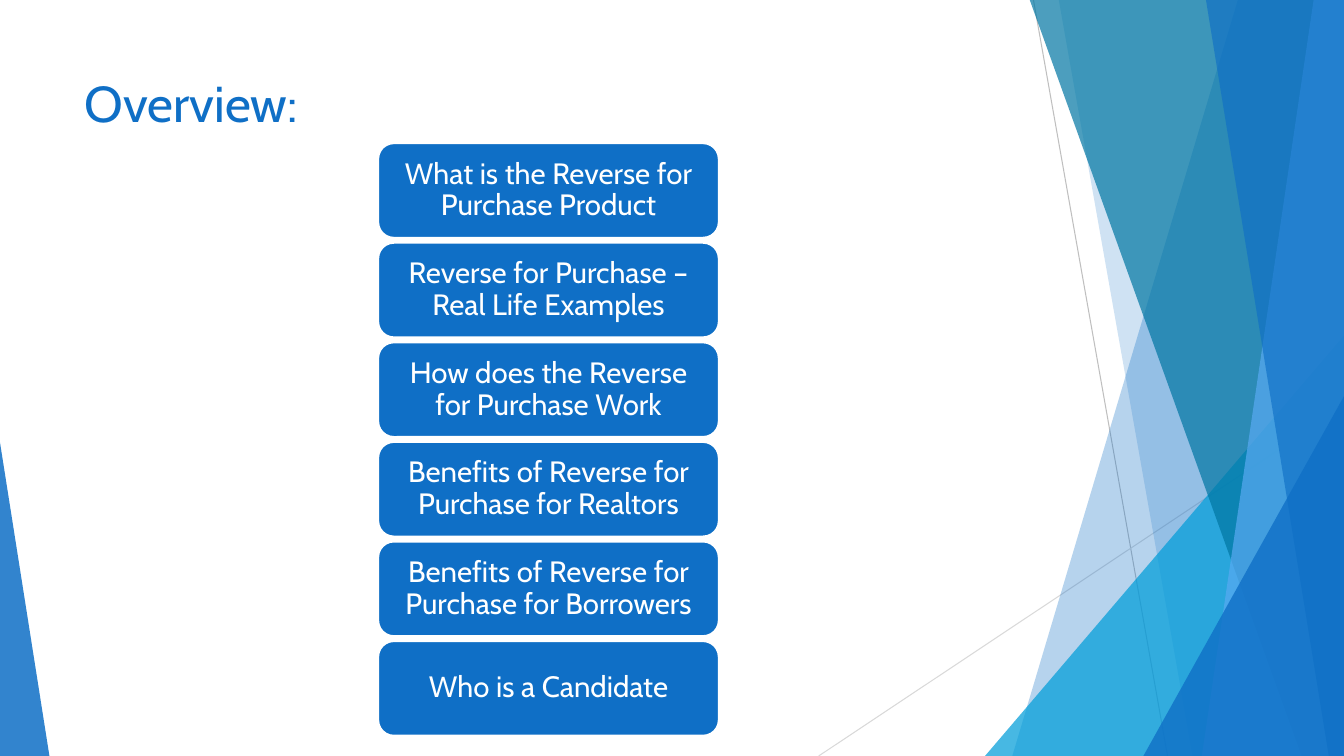
from lxml import etree
from pptx import Presentation
from pptx.dml.color import RGBColor
from pptx.enum.shapes import MSO_CONNECTOR, MSO_SHAPE
from pptx.enum.text import MSO_ANCHOR, PP_ALIGN
from pptx.oxml.ns import qn
from pptx.util import Inches, Pt

BLUE = RGBColor(0x0F, 0x6F, 0xC6)
CYAN = RGBColor(0x00, 0x9D, 0xD9)
TEAL = RGBColor(0x00, 0x76, 0xA3)
SKY = RGBColor(0x59, 0xAA, 0xF2)
GREY = RGBColor(0xBF, 0xBF, 0xBF)
PALE_GREY = RGBColor(0xD9, 0xD9, 0xD9)
WHITE = RGBColor(0xFF, 0xFF, 0xFF)
WIDTH, HEIGHT, TOP = 13.33, 7.5, -0.01


def fill_glass(shape, color, opacity):
    """Fill a decorative shape with a see-through colour and no outline."""
    shape.shadow.inherit = False
    shape.line.fill.background()
    shape.fill.solid()
    shape.fill.fore_color.rgb = color
    solid = shape.fill._xPr.find(qn("a:solidFill"))
    etree.SubElement(solid[0], qn("a:alpha"), val=str(opacity * 1000))


def write_text(frame, text, size, color, **formats):
    """Write one paragraph; formats are paragraph attributes."""
    frame.word_wrap = True
    para = frame.paragraphs[0]
    for name, value in formats.items():
        setattr(para, name, value)
    span = para.add_run()
    span.text = text
    for name, value in {"name": "Cabin", "size": Pt(size)}.items():
        setattr(span.font, name, value)
    span.font.color.rgb = color


deck = Presentation()
deck.slide_width, deck.slide_height = Inches(WIDTH), Inches(HEIGHT)
page = deck.slides.add_slide(deck.slide_layouts[6])

# Thin background lines
for x1, y1, x2, y2, color in [
    (10.25, 0, 11.58, HEIGHT, GREY),
    (WIDTH, 4.03, 8.12, HEIGHT, PALE_GREY),
]:
    line = page.shapes.add_connector(
        MSO_CONNECTOR.STRAIGHT, Inches(x1), Inches(y1), Inches(x2), Inches(y2))
    line.line.color.rgb = color
    line.line.width = Pt(0.75)
    etree.SubElement(line._element.spPr, qn("a:effectLst"))

# Glass shards, back to front: a band has the x of its slanted edge at top and
# bottom, a triangle has its left, top, width and apex position
for kind, place, color, opacity in [
    ("band", (12.28, 10.04), BLUE, 30),
    ("band", (10.5, 11.83), BLUE, 20),
    ("triangle", (9.77, 3.33, 3.56, 1), CYAN, 72),
    ("band", (10.21, 12.91), TEAL, 70),
    ("band", (13.03, 11.92), SKY, 70),
    ("band", (11.96, 13.18), BLUE, 65),
    ("triangle", (11.34, 3.93, 1.99, 1), BLUE, 80),
    ("triangle", (0, 4.39, 0.49, 0), BLUE, 85),
]:
    if kind == "band":
        upper, lower = place
        outline = page.shapes.build_freeform(Inches(upper), Inches(TOP))
        corners = [(WIDTH, TOP), (WIDTH, HEIGHT), (lower, HEIGHT)]
        outline.add_line_segments([(Inches(x), Inches(y)) for x, y in corners])
        shard = outline.convert_to_shape()
    else:
        left, top, width, apex = place
        shard = page.shapes.add_shape(
            MSO_SHAPE.ISOSCELES_TRIANGLE, Inches(left), Inches(top),
            Inches(width), Inches(HEIGHT - top))
        shard.adjustments[0] = apex
    fill_glass(shard, color, opacity)

# Title
title = page.shapes.add_textbox(Inches(0.74), Inches(0.67), Inches(9.4), Inches(1.44))
write_text(title.text_frame, "Overview:", 36, BLUE)

# Topic boxes
topics = [
    "What is the Reverse for Purchase Product",
    "Reverse for Purchase – Real Life Examples",
    "How does the Reverse for Purchase Work",
    "Benefits of Reverse for Purchase for Realtors",
    "Benefits of Reverse for Purchase for Borrowers",
    "Who is a Candidate",
]
box_formats = {
    "margin_left": Inches(0.09), "margin_right": Inches(0.09),
    "margin_top": Inches(0.04), "margin_bottom": Inches(0.04),
    "vertical_anchor": MSO_ANCHOR.MIDDLE,
}
for row, topic in enumerate(topics):
    box = page.shapes.add_shape(
        MSO_SHAPE.ROUNDED_RECTANGLE, Inches(3.75), Inches(1.42 + row * 4.94 / 5),
        Inches(3.38), Inches(0.94))
    box.shadow.inherit = False
    box.fill.solid()
    box.fill.fore_color.rgb = BLUE
    box.line.color.rgb = WHITE
    box.line.width = Pt(1.5)
    for name, value in box_formats.items():
        setattr(box.text_frame, name, value)
    write_text(box.text_frame, topic, 21, WHITE,
               alignment=PP_ALIGN.CENTER, line_spacing=0.9)

deck.save("out.pptx")
